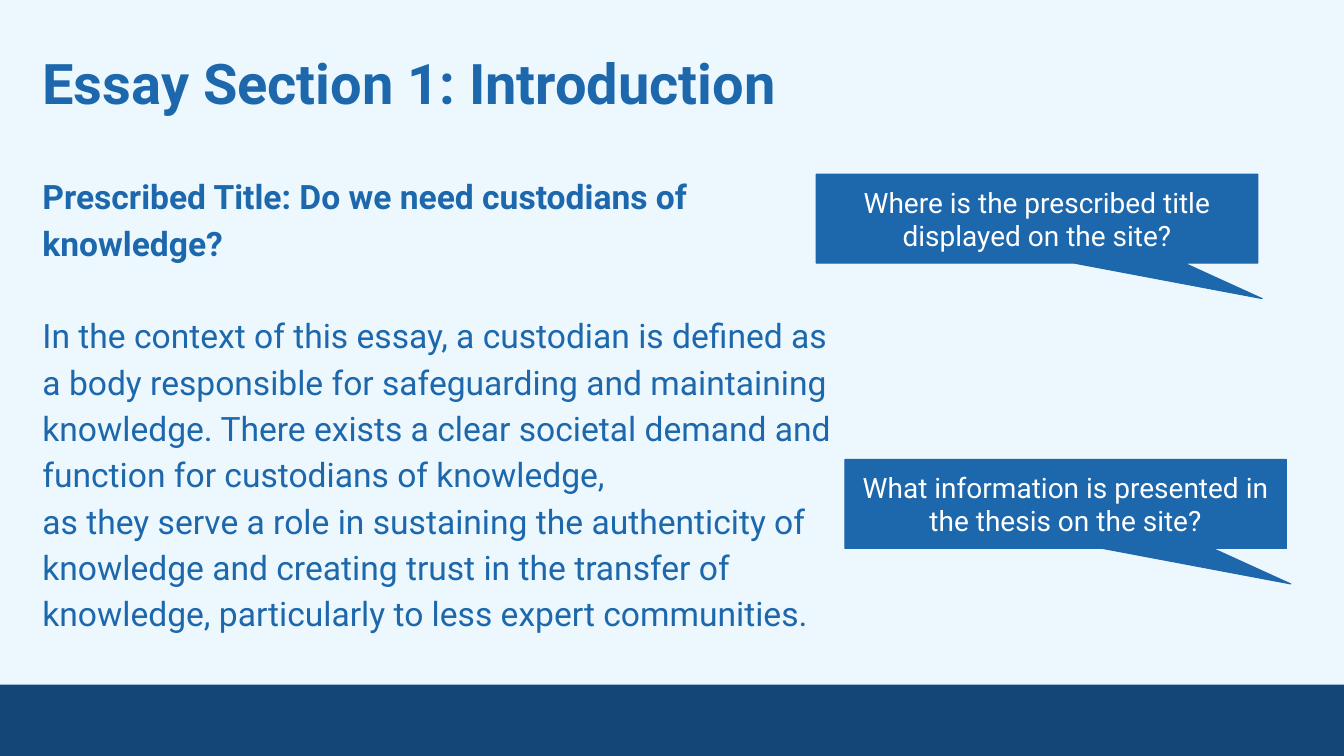
from pptx import Presentation
from pptx import util as u
from pptx.dml.color import RGBColor
from pptx.enum import shapes, text

COLOURS = {"sky": "ECF8FE", "blue": "1D67AC", "navy": "144777", "white": "FFFFFF"}
FONT = "Roboto"


def colour(name):
    return RGBColor.from_string(COLOURS[name])


def write(frame, *paragraphs, size, ink="blue", bold=(), align=text.PP_ALIGN.LEFT,
          anchor=text.MSO_ANCHOR.TOP, inset=0.33, line=1.0, gaps=()):
    """Fill a text frame; bold holds paragraph indexes, gaps maps index to space before."""
    frame.word_wrap = True
    frame.auto_size = text.MSO_AUTO_SIZE.NONE
    frame.vertical_anchor = anchor
    frame.margin_left = frame.margin_right = u.Cm(inset)
    frame.margin_top = frame.margin_bottom = u.Cm(inset)
    gaps = dict(gaps)
    for index, words in enumerate(paragraphs):
        paragraph = frame.add_paragraph() if index else frame.paragraphs[0]
        paragraph.alignment = align
        paragraph.line_spacing = line
        paragraph.space_before = u.Pt(gaps.get(index, 0))
        run = paragraph.add_run()
        run.text = words
        run.font.name = FONT
        run.font.size = u.Pt(size)
        run.font.bold = index in bold
        run.font.color.rgb = colour(ink)


class EssaySlide:
    def __init__(self, deck):
        self.slide = deck.slides.add_slide(deck.slide_layouts[5])
        self.slide.background.fill.solid()
        self.slide.background.fill.fore_color.rgb = colour("sky")

    def title(self, words, left, top, width, height):
        heading = self.slide.shapes.title
        heading.left, heading.top = u.Cm(left), u.Cm(top)
        heading.width, heading.height = u.Cm(width), u.Cm(height)
        write(heading.text_frame, words, size=40, bold=(0,))

    def body(self, paragraphs, left, top, width, height, **style):
        essay = self.slide.shapes.add_textbox(*map(u.Cm, (left, top, width, height)))
        write(essay.text_frame, *paragraphs, **style)

    def block(self, kind, fill, left, top, width, height):
        block = self.slide.shapes.add_shape(kind, *map(u.Cm, (left, top, width, height)))
        block.shadow.inherit = False
        block.fill.solid()
        block.fill.fore_color.rgb = colour(fill)
        block.line.fill.background()
        return block

    def callout(self, question, left, top):
        callout = self.block(shapes.MSO_SHAPE.ROUNDED_RECTANGULAR_CALLOUT, "blue",
                             left, top, 11.13, 2.24)
        for index, value in enumerate((0.51, 0.9, 0)):
            callout.adjustments[index] = value
        callout.line.color.rgb = colour("blue")
        callout.line.width = u.Pt(0.75)
        write(callout.text_frame, question, size=20, ink="white", inset=0.25,
              align=text.PP_ALIGN.CENTER, anchor=text.MSO_ANCHOR.MIDDLE)


def main():
    deck = Presentation()
    deck.slide_width, deck.slide_height = u.Cm(33.87), u.Cm(19.05)
    page = EssaySlide(deck)
    page.block(shapes.MSO_SHAPE.RECTANGLE, "navy", -0.05, 17.25, 33.96, 1.8)
    page.title("Essay Section 1: Introduction", 0.74, 0.89, 30.96, 2.39)
    page.body(
        ("Prescribed Title: Do we need custodians of knowledge?",
         "In the context of this essay, a custodian is defined as a body responsible for "
         "safeguarding and maintaining knowledge. There exists a clear societal demand "
         "and function for custodians of knowledge,",
         "as they serve a role in sustaining the authenticity of knowledge and creating "
         "trust in the transfer of knowledge, particularly to less expert communities."),
        0.74, 3.96, 20.55, 11.76, size=24, bold=(0,), line=1.15, gaps={1: 33})
    page.callout("Where is the prescribed title displayed on the site?", 20.57, 4.39)
    page.callout("What information is presented in the thesis on the site?", 21.29, 11.58)
    deck.save("out.pptx")


if __name__ == "__main__":
    main()
